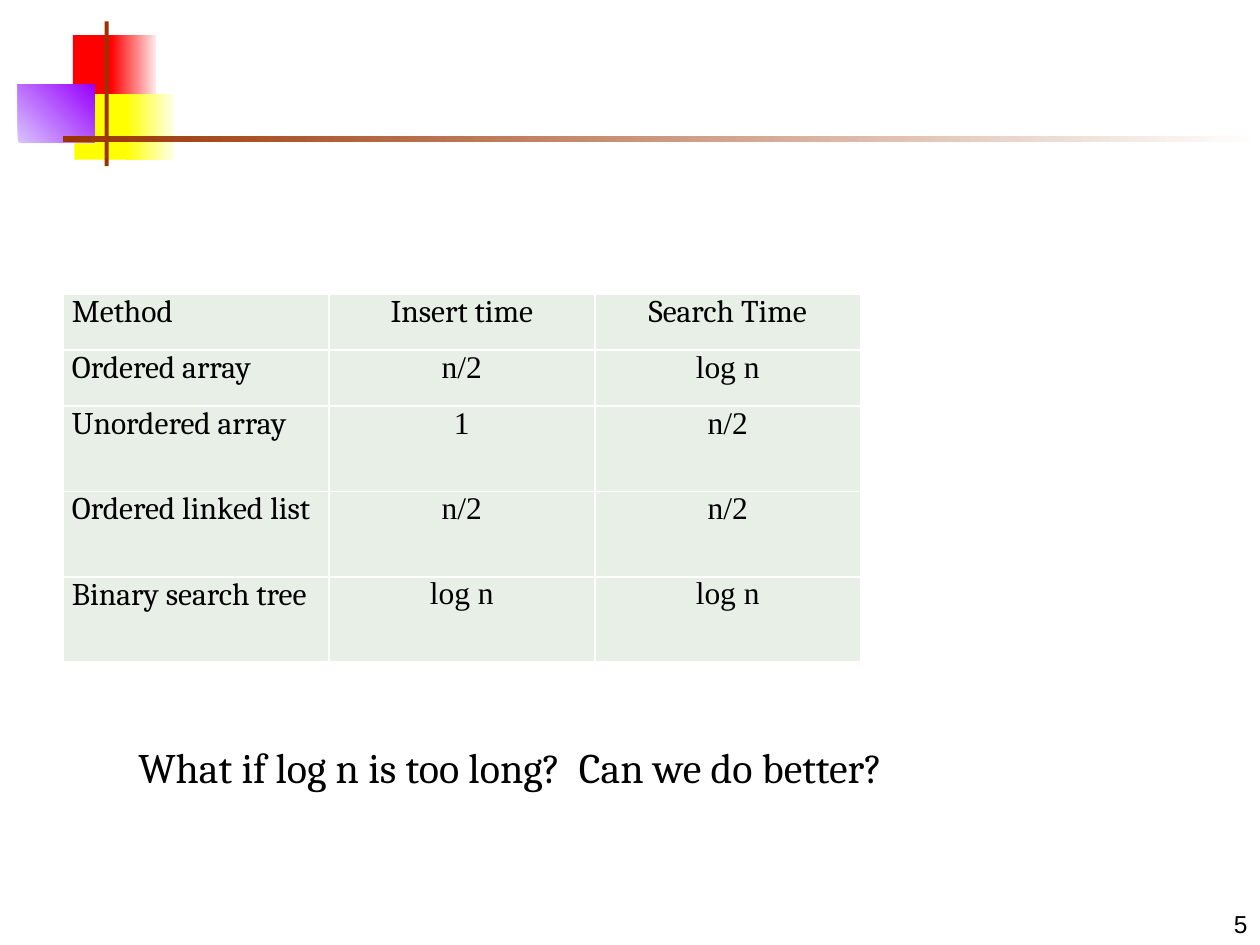
from lxml.etree import SubElement
from pptx import Presentation
from pptx.dml.color import RGBColor
from pptx.enum.shapes import MSO_SHAPE as Preset
from pptx.enum.text import MSO_ANCHOR as Anchor, MSO_AUTO_SIZE as AutoSize, PP_ALIGN as Align
from pptx.oxml.ns import qn
from pptx.util import Cm, Pt

THEME = {
    "ink": "000000", "cell": "E7EFE7", "border": "FFFFFF",
    "red": "FF0000", "pink": "FFEAEA", "yellow": "FFFF00", "cream": "FFFFF8",
    "lilac": "D8C4FF", "purple": "9900FF", "brown": "993300", "white": "FFFFFF",
    "label_font": "Cambria", "value_font": "Times New Roman", "number_font": "Arial",
    "table_size": 18, "question_size": 24, "number_size": 14,
}

DECORATION = [
    ((1.47, 0.71, 0.89, 1.32), ("red",), 0),
    ((2.24, 0.71, 0.91, 1.32), ("red", "pink"), 0),
    ((1.5, 1.9, 1.17, 1.32), ("yellow",), 0),
    ((2.54, 1.9, 1.02, 1.32), ("yellow", "cream"), 0),
    ((0.36, 1.7, 1.55, 1.17), ("lilac", "purple"), 45),
    ((2.11, 0.43, 0.08, 2.92), ("brown",), 0),
    ((1.27, 2.74, 24.13, 0.13), ("brown", "white"), 0),
]

METHODS = [
    ("Method", "Insert time", "Search Time"),
    ("Ordered array", "n/2", "log n"),
    ("Unordered array", "1", "n/2"),
    ("Ordered linked list", "n/2", "n/2"),
    ("Binary search tree", "log n", "log n"),
]
TABLE_LEFT, TABLE_TOP, COLUMN_WIDTH = 1.27, 5.93, 5.36
ROW_HEIGHTS = [1.13, 1.13, 1.72, 1.72, 1.72]

QUESTION = "What if log n is too long?  Can we do better?"
PAGE_NUMBER = "5"


def color(name):
    return RGBColor.from_string(THEME[name])


def apply(target, values):
    for name, value in values.items():
        setattr(target, name, value)


def write(frame, text, font, size, align=Align.LEFT):
    para = frame.paragraphs[0]
    para.alignment = align
    span = para.add_run()
    span.text = text
    apply(span.font, {"name": THEME[font], "size": Pt(THEME[size])})
    span.font.color.rgb = color("ink")


def add_block(page, place, colors, angle):
    block = page.shapes.add_shape(Preset.RECTANGLE, *map(Cm, place))
    block.shadow.inherit = False
    block.line.fill.background()
    if len(colors) == 1:
        block.fill.solid()
        block.fill.fore_color.rgb = color(colors[0])
        return
    block.fill.gradient()
    block.fill.gradient_angle = angle
    for stop, name in zip(block.fill.gradient_stops, colors):
        stop.color.rgb = color(name)


def add_text(page, place, text, font, size, align, frame_values):
    box = page.shapes.add_textbox(*map(Cm, place))
    apply(box.text_frame, frame_values)
    write(box.text_frame, text, font, size, align)


def style_cell(cell):
    apply(cell, {"margin_left": Cm(0.18), "margin_right": Cm(0.18),
                 "margin_top": 0, "margin_bottom": 0})
    properties = cell._tc.get_or_add_tcPr()
    for side in ("lnL", "lnR", "lnT", "lnB"):
        line = SubElement(properties, qn(f"a:{side}"), w=str(Pt(1)))
        SubElement(SubElement(line, qn("a:solidFill")), qn("a:srgbClr"), val=THEME["border"])
    cell.fill.solid()
    cell.fill.fore_color.rgb = color("cell")


def add_methods(page):
    columns = len(METHODS[0])
    place = (TABLE_LEFT, TABLE_TOP, columns * COLUMN_WIDTH, sum(ROW_HEIGHTS))
    table = page.shapes.add_table(len(METHODS), columns, *map(Cm, place)).table
    apply(table, {"first_row": False, "horz_banding": False})
    for column in table.columns:
        column.width = Cm(COLUMN_WIDTH)
    for r, (height, texts) in enumerate(zip(ROW_HEIGHTS, METHODS)):
        table.rows[r].height = Cm(height)
        for c, text in enumerate(texts):
            cell = table.cell(r, c)
            style_cell(cell)
            font = "value_font" if r and c else "label_font"
            write(cell.text_frame, text, font, "table_size", Align.CENTER if c else Align.LEFT)


def main():
    deck = Presentation()
    apply(deck, {"slide_width": Cm(25.4), "slide_height": Cm(19.05)})
    page = deck.slides.add_slide(deck.slide_layouts.get_by_name("Blank"))
    for place, colors, angle in DECORATION:
        add_block(page, place, colors, angle)
    add_text(page, (20.12, 17.78, 5.28, 1.27), PAGE_NUMBER, "number_font", "number_size",
             Align.RIGHT, {"word_wrap": True, "vertical_anchor": Anchor.BOTTOM})
    add_methods(page)
    add_text(page, (2.54, 14.82, 15.85, 1.27), QUESTION, "label_font", "question_size",
             Align.LEFT, {"word_wrap": False, "auto_size": AutoSize.SHAPE_TO_FIT_TEXT})
    deck.save("out.pptx")


if __name__ == "__main__":
    main()
